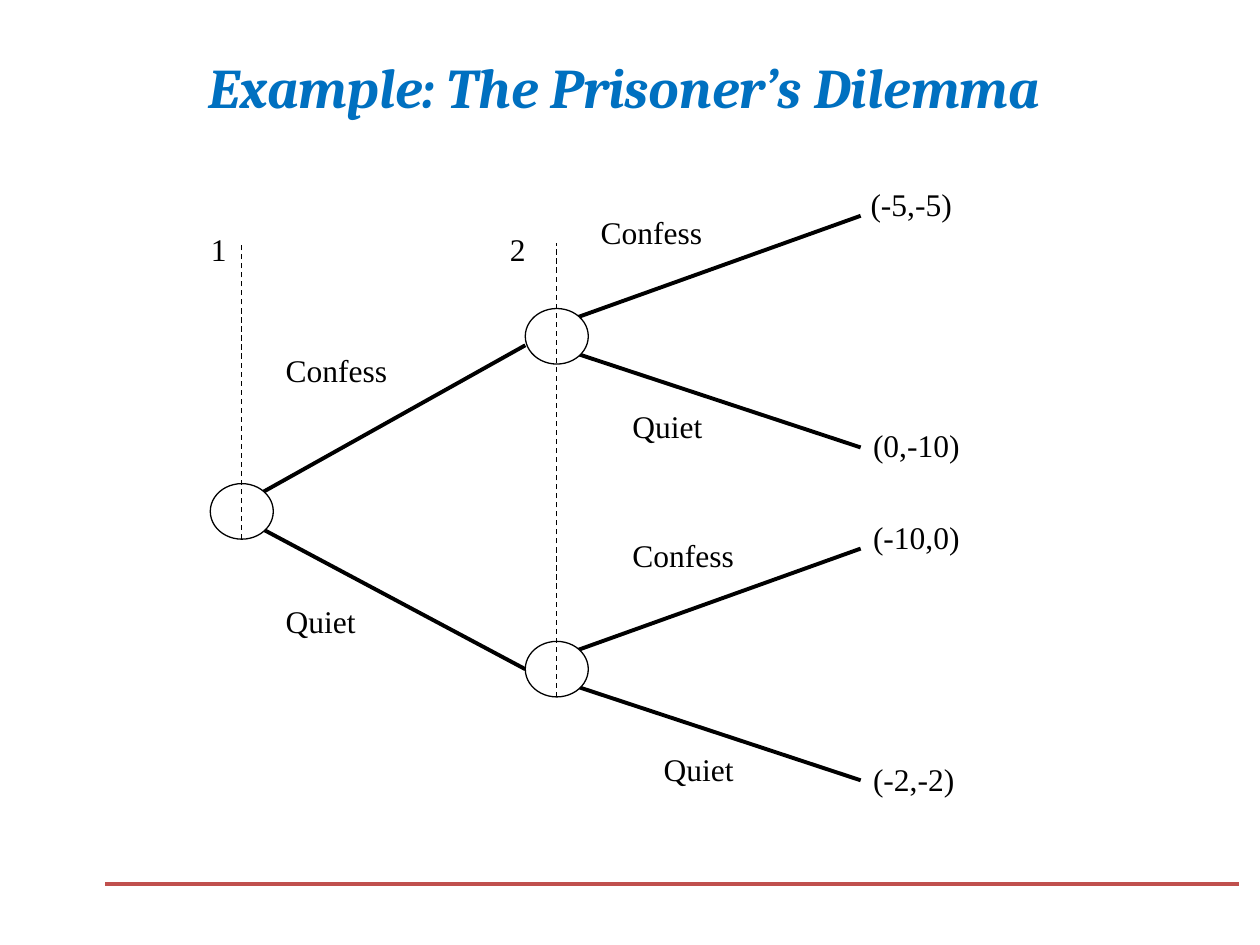
from lxml.etree import SubElement
from pptx import Presentation
from pptx.dml.color import RGBColor
from pptx.enum.dml import MSO_LINE
from pptx.enum.shapes import MSO_CONNECTOR, MSO_SHAPE
from pptx.enum.text import MSO_ANCHOR, MSO_AUTO_SIZE, PP_ALIGN
from pptx.oxml.ns import qn
from pptx.util import Cm, Pt

BLACK = RGBColor(0x00, 0x00, 0x00)
WHITE = RGBColor(0xFF, 0xFF, 0xFF)
BLUE = RGBColor(0x00, 0x70, 0xC0)
RED = RGBColor(0xC0, 0x50, 0x4D)

# Size of a node, and where branches leave it
NODE_W, NODE_H = 1.27, 1.12
EXIT_X, EXIT_UP, EXIT_DOWN = 1.04, 0.18, 0.91

# Nodes, in cm from the corner of the tree
ROOT = (0.24, 6.15)
UPPER = (6.59, 2.62)
LOWER = (6.59, 9.33)

# Text, left, top, width
LABELS = [
    ("1", 0, 0.92, 1),
    ("2", 6.03, 0.92, 1),
    ("Confess", 1.51, 3.36, 3.61),
    ("Quiet", 1.51, 8.41, 2.54),
    ("Confess", 7.86, 0.57, 3.61),
    ("Quiet", 8.5, 4.48, 2.54),
    ("Confess", 8.5, 7.09, 3.61),
    ("Quiet", 9.13, 11.39, 2.54),
    ("(-5,-5)", 13.3, 0, 2.82),
    ("(0,-10)", 13.35, 4.86, 3),
    ("(-10,0)", 13.35, 6.71, 3),
    ("(-2,-2)", 13.35, 11.59, 2.82),
]


def add_run(par, text, font, size, color):
    run = par.add_run()
    run.text = text
    run.font.name = font
    run.font.size = Pt(size)
    run.font.color.rgb = color
    return run


def add_line(slide, x1, y1, x2, y2, color=BLACK, width=2.25, dash=None):
    line = slide.shapes.add_connector(
        MSO_CONNECTOR.STRAIGHT, Cm(x1), Cm(y1), Cm(x2), Cm(y2))
    line.line.color.rgb = color
    line.line.width = Pt(width)
    if dash:
        line.line.dash_style = dash
    SubElement(line._element.spPr, qn("a:effectLst"))


def add_node(slide, x, y):
    node = slide.shapes.add_shape(
        MSO_SHAPE.OVAL, Cm(x), Cm(y), Cm(NODE_W), Cm(NODE_H))
    node.shadow.inherit = False
    node.fill.solid()
    node.fill.fore_color.rgb = WHITE
    node.line.color.rgb = BLACK
    node.line.width = Pt(0.75)


def add_label(slide, text, x, y, width):
    box = slide.shapes.add_textbox(Cm(x), Cm(y), Cm(width), Cm(1.27))
    frame = box.text_frame
    frame.word_wrap = False
    frame.auto_size = MSO_AUTO_SIZE.SHAPE_TO_FIT_TEXT
    add_run(frame.paragraphs[0], text, "Times New Roman", 18, BLACK)


def add_title(slide, left, top, width, height):
    title = slide.shapes.title
    title.left, title.top = Cm(left), Cm(top)
    title.width, title.height = Cm(width), Cm(height)
    frame = title.text_frame
    frame.vertical_anchor = MSO_ANCHOR.BOTTOM
    frame.auto_size = MSO_AUTO_SIZE.NONE
    par = frame.paragraphs[0]
    par.alignment = PP_ALIGN.CENTER
    par.line_spacing = 0.85
    run = add_run(par, "Example: The Prisoner’s Dilemma", "Cambria", 32, BLUE)
    run.font.bold = run.font.italic = True


def add_tree(slide, left, top):
    root, upper, lower = [
        (left + x, top + y) for x, y in (ROOT, UPPER, LOWER)]

    # Branches of player 1
    x, y = root
    add_line(slide, x + EXIT_X, y + EXIT_UP, upper[0], upper[1] + 0.74)
    add_line(slide, x + EXIT_X, y + EXIT_DOWN, lower[0], lower[1] + NODE_H / 2)

    # Branches of player 2
    for x, y in (upper, lower):
        for start, end in ((EXIT_UP, -1.87), (EXIT_DOWN, 2.8)):
            add_line(slide, x + EXIT_X, y + start, x + 6.76, y + end)

    # Decision nodes
    for x, y in (root, lower, upper):
        add_node(slide, x, y)

    # Dashed line of each player
    for x, y in (root, lower):
        mid = x + NODE_W / 2
        add_line(slide, mid, y + NODE_H, mid, top + 1.3,
                 width=0.75, dash=MSO_LINE.DASH)

    # Players, moves and payoffs
    for text, x, y, width in LABELS:
        add_label(slide, text, left + x, top + y, width)


def main():
    deck = Presentation()
    deck.slide_width, deck.slide_height = Cm(25.4), Cm(19.05)
    slide = deck.slides.add_slide(deck.slide_layouts[5])
    # Rule at the foot
    add_line(slide, 2.12, 17.83, 24.97, 17.83, color=RED)
    add_title(slide, 1.07, 0.91, 23.06, 1.63)
    add_tree(slide, 4, 3.6)
    deck.save("out.pptx")


if __name__ == "__main__":
    main()
